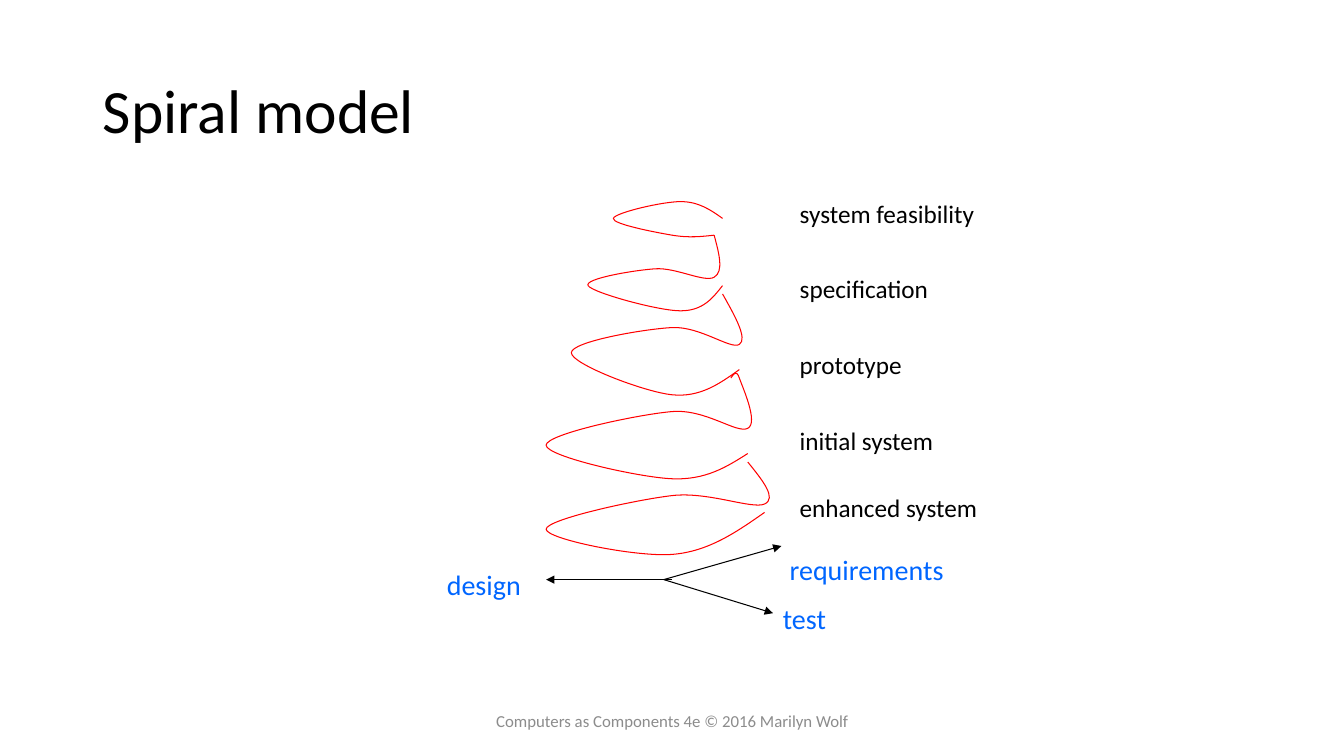
from lxml import etree
from pptx import Presentation
from pptx import util as u
from pptx.dml.color import RGBColor
from pptx.enum import shapes, text
from pptx.oxml import ns

THEME = {
    "font": "Calibri",
    "ink": RGBColor.from_string("000000"),
    "axis": RGBColor.from_string("0066FF"),
    "spiral": RGBColor.from_string("FF0000"),
    "footer": RGBColor.from_string("8C8C8C"),
    "title_size": 44,
    "axis_size": 20,
    "stage_size": 18,
    "footer_size": 12,
    "line": u.Pt(0.75),
}
CELL = u.Inches(1) / 12  # the drawing sits on a grid of twelve cells to the inch

presentation = Presentation()
presentation.slide_width = u.Inches(13.33)
presentation.slide_height = u.Inches(7.5)
slide = presentation.slides.add_slide(presentation.slide_layouts[5])


def write(shape, words, size, color, alignment=text.PP_ALIGN.LEFT):
    shape.text_frame.text = words
    paragraph = shape.text_frame.paragraphs[0]
    paragraph.alignment = alignment
    font = paragraph.runs[0].font
    font.name, font.size, font.color.rgb = THEME["font"], u.Pt(size), color
    return paragraph


def smooth_points(anchors):
    """Return a curve through the anchors as start, control, control, end, ..."""
    last = len(anchors) - 1
    slopes = [
        [(after - before) / 6 for before, after in zip(anchors[i - 1], anchors[i + 1])]
        for i in range(1, last)
    ]
    points = [anchors[0]]
    for i in range(last):
        start, end = anchors[i], anchors[i + 1]
        leave = [a + s for a, s in zip(start, slopes[i - 1])] if i > 0 else None
        arrive = [a - s for a, s in zip(end, slopes[i])] if i < last - 1 else None
        leave = leave or [(a + b) / 2 for a, b in zip(start, arrive)]
        arrive = arrive or [(a + b) / 2 for a, b in zip(leave, end)]
        points += [leave, arrive, end]
    return points


# Title
title = slide.shapes.title
title.left, title.top = u.Inches(0.92), u.Inches(0.4)
title.width, title.height = u.Inches(11.5), u.Inches(1.45)
title.text_frame.vertical_anchor = text.MSO_ANCHOR.MIDDLE
write(title, "Spiral model", THEME["title_size"], THEME["ink"]).line_spacing = 0.9

# Three axes: start and end in columns and rows
axes = [((79, 69), (93, 65)), ((80, 69), (65, 69)), ((79, 69), (92, 73))]
for start, end in axes:
    arrow = slide.shapes.add_connector(
        shapes.MSO_CONNECTOR.STRAIGHT, *[round(n * CELL) for n in start + end]
    )
    arrow.line.color.rgb = THEME["ink"]
    arrow.line.width = THEME["line"]
    etree.SubElement(arrow.line._get_or_add_ln(), ns.qn("a:tailEnd"), type="triangle")
    etree.SubElement(arrow._element.spPr, ns.qn("a:effectLst"))

# Labels: words, column, row, width in cells
axis_labels = [
    ("requirements", 92.8, 65.2, 21),
    ("design", 52, 67, 11.3),
    ("test", 92, 71, 7.7),
]
stage_labels = [
    ("system feasibility", 94, 23, 23.4),
    ("specification", 94, 32, 17.9),
    ("prototype", 94, 41, 14.6),
    ("initial system", 94, 50, 18.5),
    ("enhanced system", 94, 58, 23.8),
]
for labels, kind, color, rows in (
    (axis_labels, "axis_size", THEME["axis"], 5.25),
    (stage_labels, "stage_size", THEME["ink"], 4.8),
):
    for words, column, row, columns in labels:
        label = slide.shapes.add_textbox(
            *[round(n * CELL) for n in (column, row, columns, rows)]
        )
        label.text_frame.word_wrap = False
        label.text_frame.auto_size = text.MSO_AUTO_SIZE.SHAPE_TO_FIT_TEXT
        write(label, words, THEME[kind], color)

# Spiral turns, from the top down: the grid points each curve runs through
turns = [
    [(86, 26), (81, 24), (73, 26), (80, 28), (85, 28)],
    [(85, 28), (85, 33), (78, 32), (70, 34), (81, 37), (86, 34)],
    [(86, 35), (88, 41), (80, 39), (68, 42), (80, 47), (88, 44)],
    [(87, 45), (88, 45), (89, 51), (80, 49), (65, 53), (80, 57), (89, 54)],
    [(89, 55), (91, 60), (80, 59), (65, 63), (80, 66), (91, 61)],
]
for anchors in turns:
    points = [(round(x * CELL), round(y * CELL)) for x, y in smooth_points(anchors)]
    builder = slide.shapes.build_freeform(*points[0])
    builder.add_line_segments(points[1:], close=False)
    turn = builder.convert_to_shape()
    turn.shadow.inherit = False
    turn.fill.background()
    turn.line.color.rgb = THEME["spiral"]
    turn.line.width = THEME["line"]
    # Every three straight segments become one cubic curve
    outline = turn._element.find(".//" + ns.qn("a:path"))
    segments = outline.findall(ns.qn("a:lnTo"))
    for first in range(0, len(segments), 3):
        curve = etree.SubElement(outline, ns.qn("a:cubicBezTo"))
        for segment in segments[first:first + 3]:
            curve.append(segment[0])
            outline.remove(segment)

# Footer
footer = slide.shapes.add_textbox(
    u.Inches(4.42), u.Inches(6.95), u.Inches(4.5), u.Inches(0.4)
)
footer.text_frame.word_wrap = True
footer.text_frame.vertical_anchor = text.MSO_ANCHOR.MIDDLE
write(
    footer,
    "Computers as Components 4e © 2016 Marilyn Wolf",
    THEME["footer_size"],
    THEME["footer"],
    text.PP_ALIGN.CENTER,
)

presentation.save("out.pptx")
